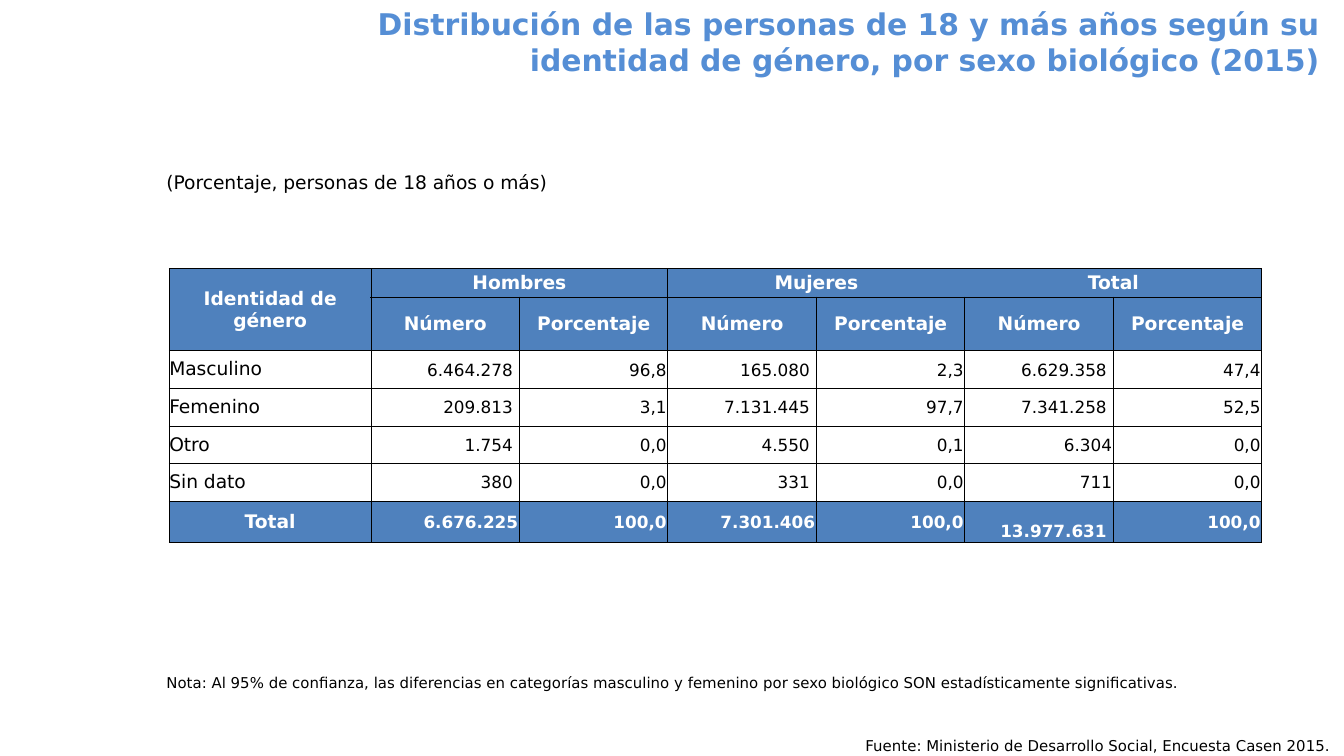
from lxml import etree
from pptx import Presentation
from pptx.dml.color import RGBColor
from pptx.enum import shapes, text
from pptx.oxml.ns import qn
from pptx.util import Inches, Pt

FONT = "DejaVu Sans"
COLORS = {"title": "558ED5", "header": "4F81BD", "white": "FFFFFF", "black": "000000"}
LEFT, CENTER, RIGHT = text.PP_ALIGN.LEFT, text.PP_ALIGN.CENTER, text.PP_ALIGN.RIGHT
SUBHEADS = ["Número", "Porcentaje"] * 3
ROWS = [
    ["Identidad de género", "Hombres", "", "Mujeres", "", "Total", ""],
    [""] + SUBHEADS,
    ["Masculino", "6.464.278", "96,8", "165.080", "2,3", "6.629.358", "47,4"],
    ["Femenino", "209.813", "3,1", "7.131.445", "97,7", "7.341.258", "52,5"],
    ["Otro", "1.754", "0,0", "4.550", "0,1", "6.304", "0,0"],
    ["Sin dato", "380", "0,0", "331", "0,0", "711", "0,0"],
    ["Total", "6.676.225", "100,0", "7.301.406", "100,0", "13.977.631", "100,0"],
]
ROW_HEIGHTS = [0.21, 0.4, 0.28, 0.28, 0.28, 0.28, 0.31]
TOTAL_ROW = len(ROWS) - 1
FIRST_COLUMN = 1.5


def rgb(name):
    return RGBColor.from_string(COLORS[name])


def write(frame, content, size, color, align=LEFT, bold=False):
    frame.text = content
    for paragraph in frame.paragraphs:
        paragraph.alignment = align
        for run in paragraph.runs:
            run.font.name = FONT
            run.font.size = Pt(size)
            run.font.bold = bold
            run.font.color.rgb = rgb(color)


def add_title(slide, left, top, width, height):
    title = slide.shapes.title
    title.left, title.top = Inches(left), Inches(top)
    title.width, title.height = Inches(width), Inches(height)
    frame = title.text_frame
    write(frame, "Distribución de las personas de 18 y más años según su\n"
          "identidad de género, por sexo biológico (2015)", 16, "title", RIGHT, True)
    frame.auto_size = text.MSO_AUTO_SIZE.NONE
    frame.vertical_anchor = text.MSO_ANCHOR.MIDDLE
    frame.word_wrap = True
    frame.margin_right = Inches(0.18)


def add_caption(slide, content, size, left, top, width, height):
    caption = slide.shapes.add_textbox(Inches(left), Inches(top), Inches(width), Inches(height))
    caption.text_frame.word_wrap = True
    write(caption.text_frame, content, size, "black")


def add_source(slide, left, top, width, height):
    source = slide.shapes.add_shape(shapes.MSO_SHAPE.RECTANGLE, Inches(left), Inches(top),
                                    Inches(width), Inches(height))
    source.shadow.inherit = False
    source.fill.solid()
    source.fill.fore_color.rgb = rgb("white")
    source.line.fill.background()
    source.text_frame.word_wrap = False
    source.text_frame.vertical_anchor = text.MSO_ANCHOR.TOP
    write(source.text_frame, "Fuente: Ministerio de Desarrollo Social, Encuesta Casen 2015.",
          8, "black", RIGHT)


def set_borders(cell, hidden):
    properties = cell._tc.get_or_add_tcPr()
    for side in "LRTB":
        line = etree.SubElement(properties, qn(f"a:ln{side}"), w=str(Pt(0.5)))
        if side in hidden:
            etree.SubElement(line, qn("a:noFill"))
        else:
            fill = etree.SubElement(line, qn("a:solidFill"))
            etree.SubElement(fill, qn("a:srgbClr"), val=COLORS["black"])


def hidden_sides(row, column):
    if row == 0 and column in (3, 4):
        return "R"
    if row == 0 and column in (5, 6):
        return "L"
    return ""


def format_cell(cell, row, column, content):
    header = row < 2
    shaded = header or row == TOTAL_ROW
    figure = column > 0 and not header
    set_borders(cell, hidden_sides(row, column))
    if shaded:
        cell.fill.solid()
        cell.fill.fore_color.rgb = rgb("header")
    else:
        cell.fill.background()

    inset = 0.01 if figure else 0
    cell.margin_left = cell.margin_right = cell.margin_top = Inches(inset)
    cell.margin_bottom = 0
    cell.vertical_anchor = text.MSO_ANCHOR.MIDDLE
    flush = row == TOTAL_ROW or (column == 5 and row >= 4)
    if figure and column % 2 and not flush:
        cell.margin_right = Inches(0.05)
    if (row, column) == (TOTAL_ROW, 5):
        cell.margin_right = Inches(0.05)
        cell.margin_top = Inches(0.15)

    align = RIGHT if figure else CENTER if shaded else LEFT
    write(cell.text_frame, content, 9 if figure else 10,
          "white" if shaded else "black", align, shaded)


def add_identity_table(slide, left, top, width):
    frame = slide.shapes.add_table(len(ROWS), len(ROWS[0]), Inches(left), Inches(top),
                                   Inches(width), Inches(sum(ROW_HEIGHTS)))
    table = frame.table
    table.first_row = table.horz_banding = False
    figure_width = (width - FIRST_COLUMN) / len(SUBHEADS)
    for index, column in enumerate(table.columns):
        column.width = Inches(figure_width if index else FIRST_COLUMN)
    for row, height in zip(table.rows, ROW_HEIGHTS):
        row.height = Inches(height)
    for row, values in enumerate(ROWS):
        for column, content in enumerate(values):
            format_cell(table.cell(row, column), row, column, content)
    table.cell(0, 0).merge(table.cell(1, 0))
    for column in (1, 3, 5):
        table.cell(0, column).merge(table.cell(0, column + 1))


def main():
    deck = Presentation()
    deck.slide_width = Inches(10)
    deck.slide_height = deck.slide_width * 9 // 16
    slide = deck.slides.add_slide(deck.slide_layouts[5])
    add_title(slide, 1.1, -0.01, 8.9, 0.64)
    add_source(slide, 4.8, 5.43, 5.2, 0.17)
    add_caption(slide, "(Porcentaje, personas de 18 años o más)", 10, 1.14, 1.22, 3.13, 0.27)
    add_identity_table(slide, 1.26, 2, 8.13)
    add_caption(slide, "Nota: Al 95% de confianza, las diferencias en categorías masculino y femenino "
                "por sexo biológico SON estadísticamente significativas.", 8, 1.14, 4.96, 8.34, 0.24)
    deck.save("out.pptx")


if __name__ == "__main__":
    main()
